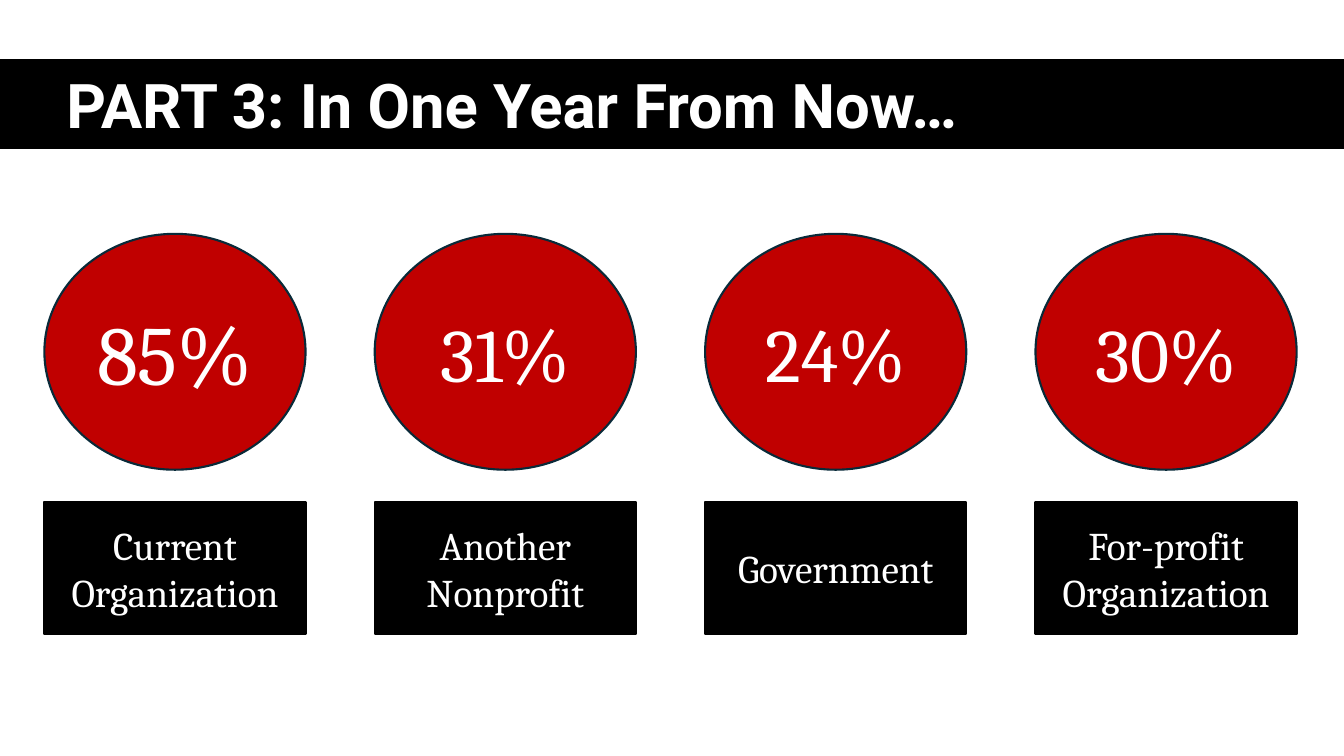
from pptx import Presentation
from pptx import util as u
from pptx.dml.color import RGBColor
from pptx.enum import shapes, text

BLACK = RGBColor(0x00, 0x00, 0x00)
WHITE = RGBColor(0xFF, 0xFF, 0xFF)
RED = RGBColor(0xC0, 0x00, 0x00)
NAVY = RGBColor(0x09, 0x2A, 0x39)

ANSWERS = [
    ("85%", 60, "Current Organization"),
    ("31%", 54, "Another Nonprofit"),
    ("24%", 54, "Government"),
    ("30%", 54, "For-profit Organization"),
]
FIRST_LEFT = 0.44
LAST_LEFT = 10.27
COLUMN_STEP = (LAST_LEFT - FIRST_LEFT) / (len(ANSWERS) - 1)
COLUMN_WIDTH = 2.59


class SlideBuilder:
    heading_font = "Roboto"
    body_font = "Cambria"
    line_width = u.Pt(1.5)

    def __init__(self, slide):
        self.slide = slide

    def set_text(self, shape, wording, size, font, align, bold=False):
        frame = shape.text_frame
        frame.word_wrap = True
        frame.vertical_anchor = text.MSO_ANCHOR.MIDDLE
        frame.text = wording
        paragraph = frame.paragraphs[0]
        paragraph.alignment = align
        run_font = paragraph.runs[0].font
        run_font.name = font
        run_font.size = u.Pt(size)
        run_font.bold = bold
        run_font.color.rgb = WHITE
        return paragraph

    def title(self, wording, left, top, width, height):
        box = self.slide.shapes.add_textbox(
            u.Inches(left), u.Inches(top), u.Inches(width), u.Inches(height))
        paragraph = self.set_text(
            box, wording, 44, self.heading_font, text.PP_ALIGN.LEFT, bold=True)
        paragraph.line_spacing = 0.9

    def panel(self, kind, left, top, width, height, fill, line, wording="", size=28):
        shape = self.slide.shapes.add_shape(
            kind, u.Inches(left), u.Inches(top), u.Inches(width), u.Inches(height))
        shape.shadow.inherit = False
        shape.fill.solid()
        shape.fill.fore_color.rgb = fill
        shape.line.color.rgb = line
        shape.line.width = self.line_width
        if wording:
            self.set_text(shape, wording, size, self.body_font, text.PP_ALIGN.CENTER)

    def bar(self, left, top, width, height, wording=""):
        self.panel(shapes.MSO_SHAPE.RECTANGLE, left, top, width, height,
                   BLACK, BLACK, wording)

    def circle(self, left, top, width, height, wording, size):
        self.panel(shapes.MSO_SHAPE.OVAL, left, top, width, height,
                   RED, NAVY, wording, size)


def main():
    presentation = Presentation()
    presentation.slide_width = u.Inches(13.33)
    presentation.slide_height = u.Inches(7.5)
    builder = SlideBuilder(presentation.slides.add_slide(presentation.slide_layouts[6]))

    builder.bar(0, 0.6, 13.33, 0.87)
    builder.title("PART 3: In One Year From Now…", 0.56, 0.35, 12, 1.45)
    for column, (share, size, label) in enumerate(ANSWERS):
        left = FIRST_LEFT + column * COLUMN_STEP
        builder.circle(left, 2.32, COLUMN_WIDTH, 2.34, share, size)
        builder.bar(left, 4.98, COLUMN_WIDTH, 1.31, label)

    presentation.save("out.pptx")


if __name__ == "__main__":
    main()
